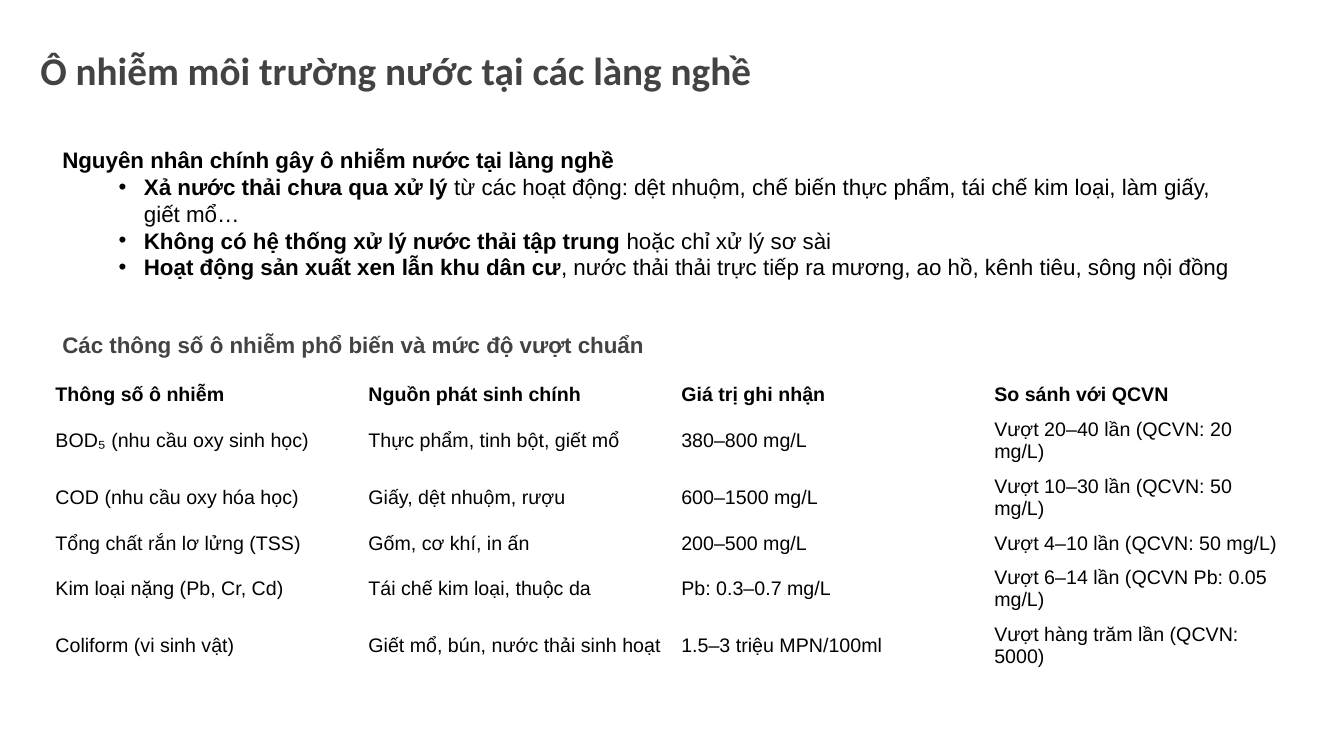
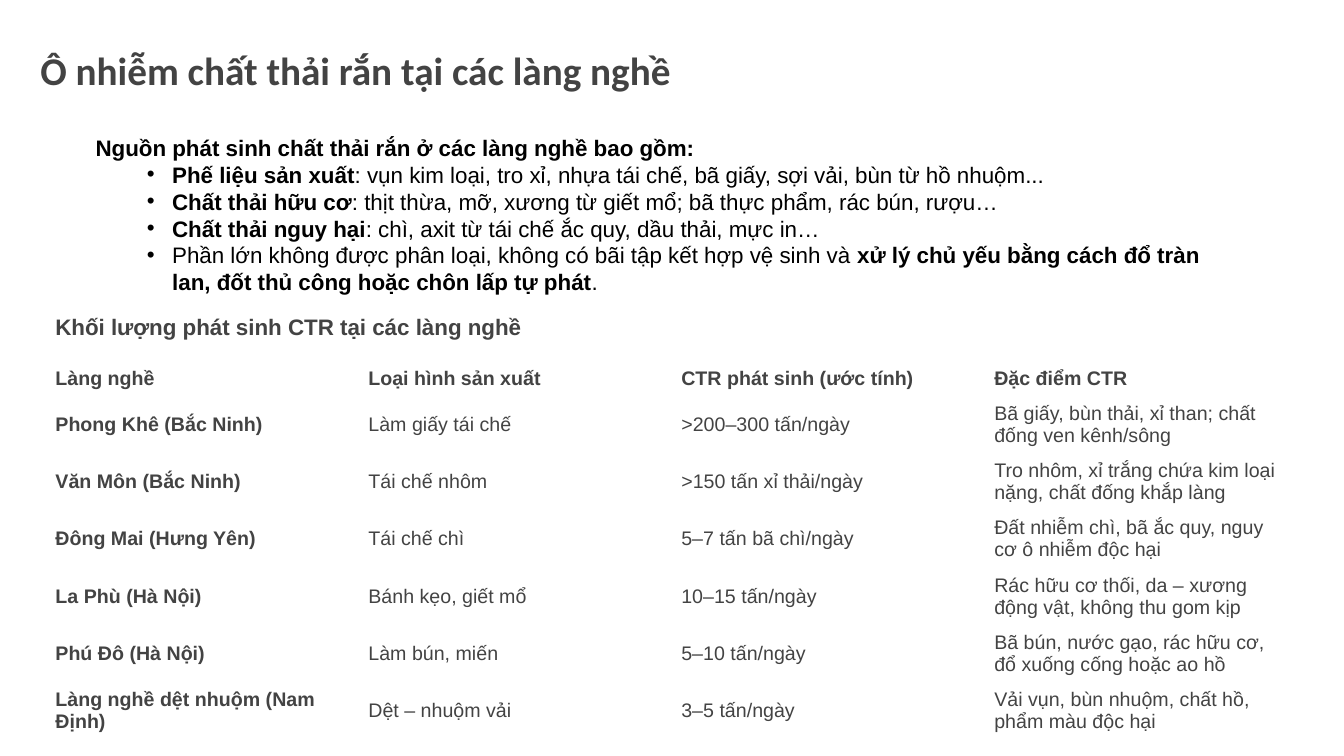
from pptx import Presentation
from pptx.dml.color import RGBColor
from pptx.enum.text import MSO_ANCHOR, MSO_AUTO_SIZE, PP_ALIGN
from pptx.oxml.ns import qn
from pptx.util import Pt
from lxml import etree

TOP, MIDDLE = MSO_ANCHOR.TOP, MSO_ANCHOR.MIDDLE
LEFT = PP_ALIGN.LEFT
FIXED_SIZE = MSO_AUTO_SIZE.NONE
TITLE_ONLY = 5

COLORS = {"black": "000000", "gray": "434343"}
TITLE_FONT, BODY_FONT = "Calibri", "Arial"
TITLE_BOX = (19.4, 23.8, 690, 51)
TITLE_INSET = 9.4
TABLE_LEFT, TABLE_WIDTH = 32.4, 894.24
ONE_LINE, TWO_LINES = 24, 41
HANGING = 18

SLIDES = [
    {
        "title": "Ô nhiễm môi trường nước tại các làng nghề",
        "causes_box": (37.4, 100.8, 862, 104.4),
        "causes_heading": "Nguyên nhân chính gây ô nhiễm nước tại làng nghề",
        "bullet_indent": 58.3,
        "causes": [
            [("Xả nước thải chưa qua xử lý", True),
             (" từ các hoạt động: dệt nhuộm, chế biến thực phẩm, tái chế kim loại, làm giấy, giết mổ…", False)],
            [("Không có hệ thống xử lý nước thải tập trung", True),
             (" hoặc chỉ xử lý sơ sài", False)],
            [("Hoạt động sản xuất xen lẫn khu dân cư", True),
             (", nước thải thải trực tiếp ra mương, ao hồ, kênh tiêu, sông nội đồng", False)],
        ],
        "caption_box": (37.4, 232.6, 866, 26.6),
        "caption": "Các thông số ô nhiễm phổ biến và mức độ vượt chuẩn",
        "table_top": 270,
        "table_color": "black",
        "bold_first_column": False,
        "row_heights": [ONE_LINE, TWO_LINES, TWO_LINES, ONE_LINE, TWO_LINES, TWO_LINES],
        "rows": [
            ("Thông số ô nhiễm", "Nguồn phát sinh chính", "Giá trị ghi nhận", "So sánh với QCVN"),
            ("BOD₅ (nhu cầu oxy sinh học)", "Thực phẩm, tinh bột, giết mổ", "380–800 mg/L",
             "Vượt 20–40 lần (QCVN: 20 mg/L)"),
            ("COD (nhu cầu oxy hóa học)", "Giấy, dệt nhuộm, rượu", "600–1500 mg/L",
             "Vượt 10–30 lần (QCVN: 50 mg/L)"),
            ("Tổng chất rắn lơ lửng (TSS)", "Gốm, cơ khí, in ấn", "200–500 mg/L",
             "Vượt 4–10 lần (QCVN: 50 mg/L)"),
            ("Kim loại nặng (Pb, Cr, Cd)", "Tái chế kim loại, thuộc da", "Pb: 0.3–0.7 mg/L",
             "Vượt 6–14 lần (QCVN Pb: 0.05 mg/L)"),
            ("Coliform (vi sinh vật)", "Giết mổ, bún, nước thải sinh hoạt", "1.5–3 triệu MPN/100ml",
             "Vượt hàng trăm lần (QCVN: 5000)"),
        ],
    },
    {
        "title": "Ô nhiễm chất thải rắn tại các làng nghề",
        "causes_box": (61.2, 92.2, 815.8, 123.8),
        "causes_heading": "Nguồn phát sinh chất thải rắn ở các làng nghề bao gồm:",
        "bullet_indent": 54.7,
        "causes": [
            [("Phế liệu sản xuất", True),
             (": vụn kim loại, tro xỉ, nhựa tái chế, bã giấy, sợi vải, bùn từ hồ nhuộm...", False)],
            [("Chất thải hữu cơ", True),
             (": thịt thừa, mỡ, xương từ giết mổ; bã thực phẩm, rác bún, rượu…", False)],
            [("Chất thải nguy hại", True),
             (": chì, axit từ tái chế ắc quy, dầu thải, mực in…", False)],
            [("Phần lớn không được phân loại, không có bãi tập kết hợp vệ sinh và ", False),
             ("xử lý chủ yếu bằng cách đổ tràn lan, đốt thủ công hoặc chôn lấp tự phát", True),
             (".", False)],
        ],
        "caption_box": (32.4, 220.3, 411.8, 26.6),
        "caption": "Khối lượng phát sinh CTR tại các làng nghề",
        "table_top": 258.5,
        "table_color": "gray",
        "bold_first_column": True,
        "row_heights": [ONE_LINE] + [TWO_LINES] * 6,
        "rows": [
            ("Làng nghề", "Loại hình sản xuất", "CTR phát sinh (ước tính)", "Đặc điểm CTR"),
            ("Phong Khê (Bắc Ninh)", "Làm giấy tái chế", ">200–300 tấn/ngày",
             "Bã giấy, bùn thải, xỉ than; chất đống ven kênh/sông"),
            ("Văn Môn (Bắc Ninh)", "Tái chế nhôm", ">150 tấn xỉ thải/ngày",
             "Tro nhôm, xỉ trắng chứa kim loại nặng, chất đống khắp làng"),
            ("Đông Mai (Hưng Yên)", "Tái chế chì", "5–7 tấn bã chì/ngày",
             "Đất nhiễm chì, bã ắc quy, nguy cơ ô nhiễm độc hại"),
            ("La Phù (Hà Nội)", "Bánh kẹo, giết mổ", "10–15 tấn/ngày",
             "Rác hữu cơ thối, da – xương động vật, không thu gom kịp"),
            ("Phú Đô (Hà Nội)", "Làm bún, miến", "5–10 tấn/ngày",
             "Bã bún, nước gạo, rác hữu cơ, đổ xuống cống hoặc ao hồ"),
            ("Làng nghề dệt nhuộm (Nam Định)", "Dệt – nhuộm vải", "3–5 tấn/ngày",
             "Vải vụn, bùn nhuộm, chất hồ, phẩm màu độc hại"),
        ],
    },
]


def points(box):
    return [Pt(value) for value in box]


def style(paragraph, size, color, bold=None, font=BODY_FONT):
    paragraph.font.name = font
    paragraph.font.size = Pt(size)
    paragraph.font.color.rgb = RGBColor.from_string(COLORS[color])
    paragraph.font.bold = bold


def add_bullet(paragraph, indent):
    properties = paragraph._p.get_or_add_pPr()
    properties.set("marL", str(Pt(indent)))
    properties.set("indent", str(Pt(-HANGING)))
    etree.SubElement(properties, qn("a:buFont")).set("typeface", BODY_FONT)
    etree.SubElement(properties, qn("a:buChar")).set("char", "•")


def set_title(slide, text):
    title = slide.shapes.title
    title.left, title.top, title.width, title.height = points(TITLE_BOX)
    frame = title.text_frame
    frame.text = text
    frame.auto_size = FIXED_SIZE
    frame.vertical_anchor = TOP
    frame.margin_left = frame.margin_right = Pt(TITLE_INSET)
    frame.margin_top = frame.margin_bottom = Pt(TITLE_INSET)
    frame.paragraphs[0].alignment = LEFT
    style(frame.paragraphs[0], 28, "gray", True, TITLE_FONT)


def add_text(slide, box, text, color, anchor):
    frame = slide.shapes.add_textbox(*points(box)).text_frame
    frame.word_wrap = True
    frame.vertical_anchor = anchor
    frame.text = text
    style(frame.paragraphs[0], 16, color, True)
    return frame


def add_causes(slide, content):
    frame = add_text(slide, content["causes_box"], content["causes_heading"], "black", TOP)
    for cause in content["causes"]:
        paragraph = frame.add_paragraph()
        add_bullet(paragraph, content["bullet_indent"])
        style(paragraph, 16, "black")
        for text, bold in cause:
            run = paragraph.add_run()
            run.text = text
            run.font.bold = bold


def add_data_table(slide, content):
    rows, heights = content["rows"], content["row_heights"]
    columns = len(rows[0])
    table = slide.shapes.add_table(
        len(rows), columns,
        *points((TABLE_LEFT, content["table_top"], TABLE_WIDTH, sum(heights)))).table
    table.first_row = table.horz_banding = False
    for column in table.columns:
        column.width = Pt(TABLE_WIDTH / columns)
    for r, (values, height) in enumerate(zip(rows, heights)):
        table.rows[r].height = Pt(height)
        for c, value in enumerate(values):
            cell = table.cell(r, c)
            cell.fill.background()
            cell.vertical_anchor = MIDDLE
            cell.text = value
            bold = r == 0 or (c == 0 and content["bold_first_column"])
            style(cell.text_frame.paragraphs[0], 14, content["table_color"], bold)


def main():
    deck = Presentation()
    deck.slide_width, deck.slide_height = Pt(960), Pt(540)
    for content in SLIDES:
        slide = deck.slides.add_slide(deck.slide_layouts[TITLE_ONLY])
        set_title(slide, content["title"])
        add_causes(slide, content)
        add_data_table(slide, content)
        add_text(slide, content["caption_box"], content["caption"], "gray", MIDDLE)
    deck.save("out.pptx")


if __name__ == "__main__":
    main()
